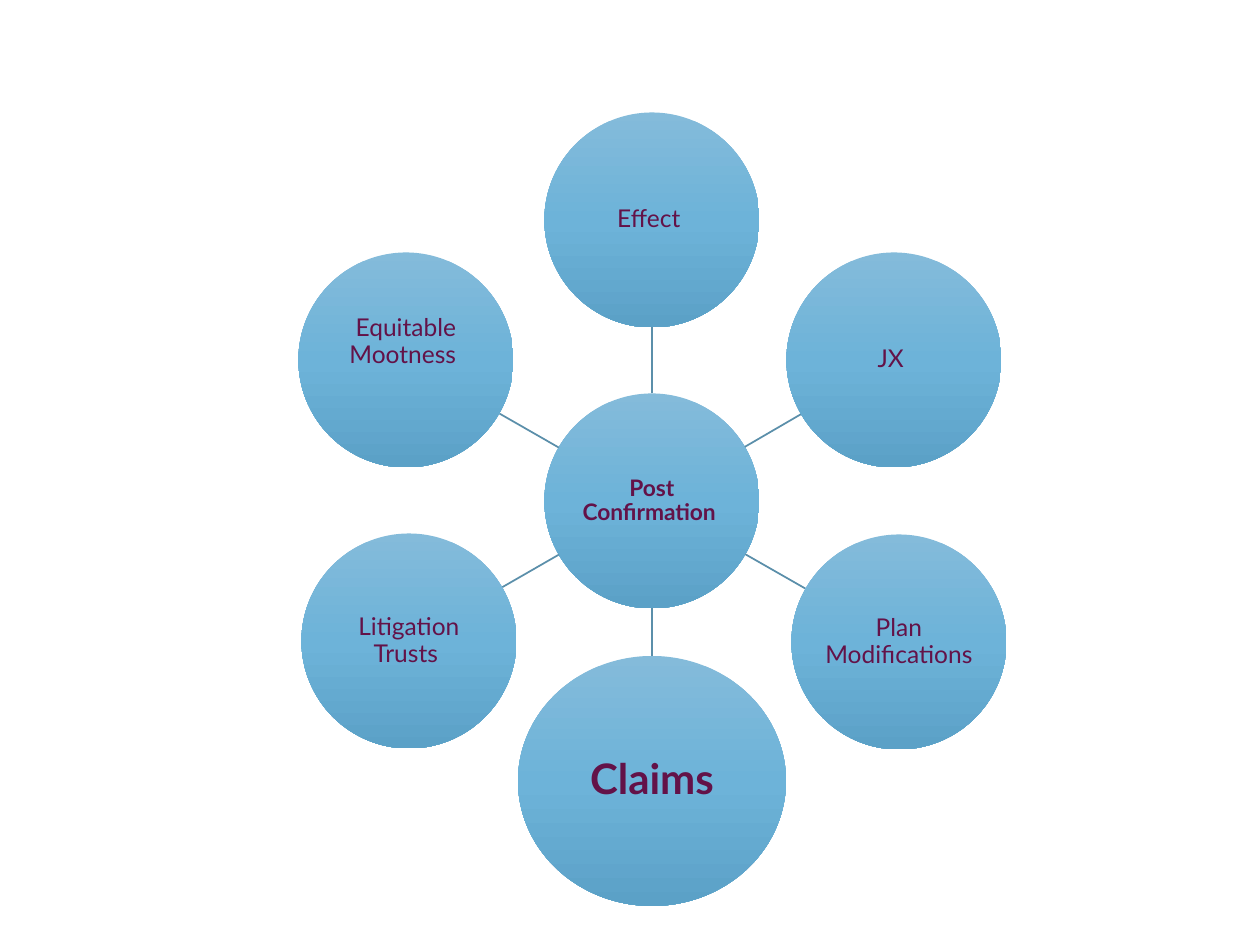
"""Build a hub-and-spoke slide of post-confirmation topics."""
from copy import deepcopy
from dataclasses import dataclass
from math import hypot

from pptx import Presentation, util as u
from pptx.dml.color import RGBColor
from pptx.enum import shapes, text
from pptx.oxml import parse_xml
from pptx.oxml.ns import nsdecls, qn

PX = 914400 / 126


@dataclass(frozen=True)
class Theme:
    """Colours, font and type sizes of the slide."""
    font: str = "Lato"
    ink: str = "631248"
    spoke: str = "5B8FAA"
    gradient: tuple = ((0, "84BBDA"), (0.5, "6DB3D9"), (1, "5BA1C7"))
    hub_size: int = 13
    topic_size: int = 14
    focus_size: int = 24


@dataclass(frozen=True)
class Circle:
    """A labelled ellipse placed by its centre, in px."""
    label: str
    x: int
    y: int
    size: int
    bold: bool = False
    width: int = 215
    height: int = 215
    lift: int = 0


THEME = Theme()
HUB = Circle("Post Confirmation ", 652, 501, THEME.hub_size, bold=True)
TOPICS = (
    Circle("Effect ", 652, 220, THEME.topic_size),
    Circle("JX ", 894, 360, THEME.topic_size),
    Circle("Plan Modifications", 899, 642, THEME.topic_size),
    Circle("Claims", 652, 781, THEME.focus_size, bold=True, width=268, height=250),
    Circle("Litigation Trusts ", 409, 641, THEME.topic_size),
    Circle("Equitable Mootness ", 406, 360, THEME.topic_size, lift=18),
)


def px(length):
    """Turn px into EMU."""
    return u.Emu(round(length * PX))


def rim_point(circle, target):
    """Return the point of a circle's rim that faces another circle."""
    dx, dy = target.x - circle.x, target.y - circle.y
    reach = 1 / hypot(dx / (circle.width / 2), dy / (circle.height / 2))
    return px(circle.x + dx * reach), px(circle.y + dy * reach)


def fill_gradient(disc):
    """Fill a disc from top to bottom with the theme's gradient."""
    disc.fill.gradient()
    disc.fill.gradient_angle = 270
    stop_list = disc.fill._xPr.find(qn("a:gradFill")).find(qn("a:gsLst"))
    stop_list.insert(1, deepcopy(stop_list[0]))
    for stop, (position, colour) in zip(disc.fill.gradient_stops, THEME.gradient):
        stop.position = position
        stop.color.rgb = RGBColor.from_string(colour)


def add_circle(slide, circle):
    """Draw a circle with its centred label."""
    disc = slide.shapes.add_shape(
        shapes.MSO_SHAPE.OVAL,
        px(circle.x - circle.width / 2), px(circle.y - circle.height / 2),
        px(circle.width), px(circle.height))
    disc.shadow.inherit = False
    disc.line.fill.background()
    fill_gradient(disc)

    frame = disc.text_frame
    frame.word_wrap = True
    frame.vertical_anchor = text.MSO_ANCHOR.MIDDLE
    frame.margin_left = frame.margin_right = frame.margin_top = px(1)
    frame.margin_bottom = px(1 + 2 * circle.lift)
    paragraph = frame.paragraphs[0]
    paragraph.alignment = text.PP_ALIGN.CENTER
    paragraph.line_spacing = 0.9
    label = paragraph.add_run()
    label.text = circle.label
    label.font.name = THEME.font
    label.font.size = u.Pt(circle.size)
    label.font.bold = circle.bold
    label.font.color.rgb = RGBColor.from_string(THEME.ink)


def add_spoke(slide, hub, topic):
    """Join the facing rims of the hub and a topic."""
    spoke = slide.shapes.add_connector(
        shapes.MSO_CONNECTOR.STRAIGHT,
        *rim_point(hub, topic), *rim_point(topic, hub))
    spoke.line.color.rgb = RGBColor.from_string(THEME.spoke)
    spoke.line.width = u.Pt(1)
    spoke._element.spPr.append(parse_xml(f"<a:effectLst {nsdecls('a')}/>"))


def main():
    """Build and save the presentation."""
    deck = Presentation()
    deck.slide_width, deck.slide_height = px(1260), px(945)
    slide = deck.slides.add_slide(deck.slide_layouts[6])
    add_circle(slide, HUB)
    for topic in TOPICS:
        add_spoke(slide, HUB, topic)
        add_circle(slide, topic)
    deck.save("out.pptx")


if __name__ == "__main__":
    main()
